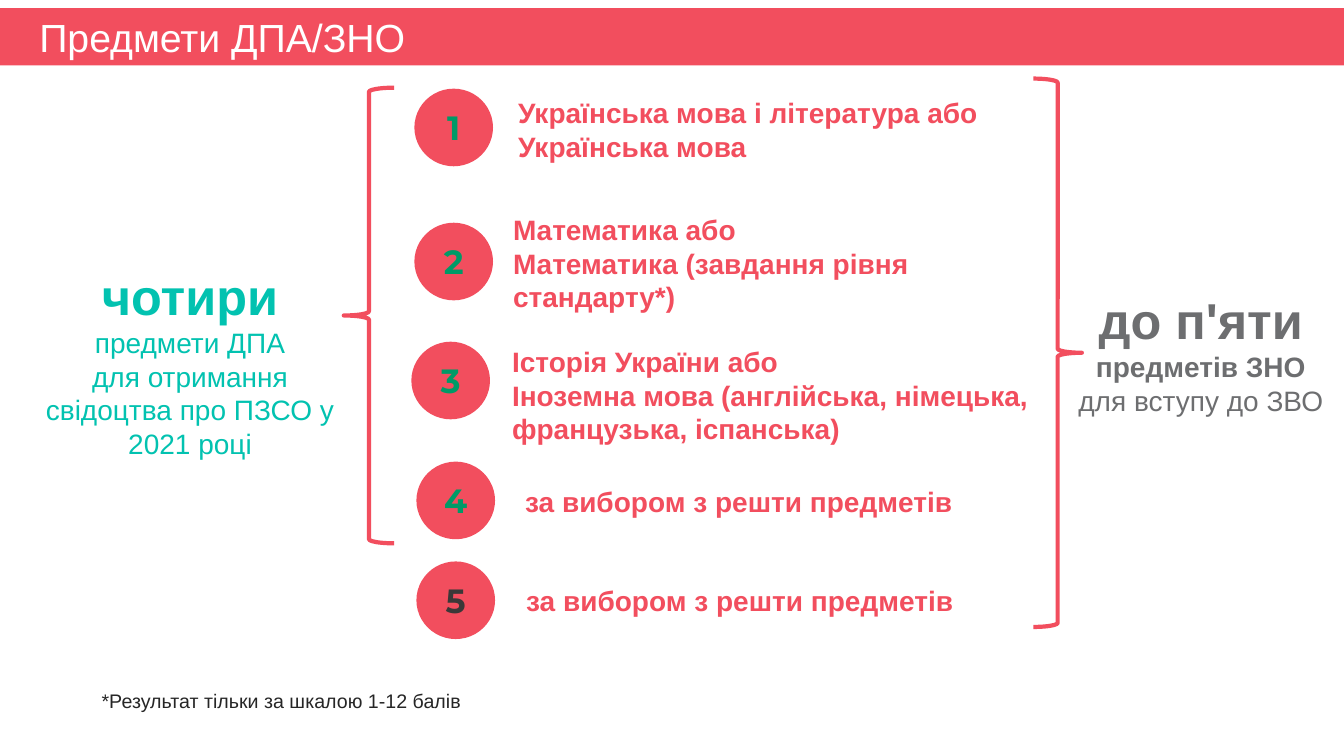
"""Build the slide that lists the DPA/ZNO exam subjects."""
from pptx import Presentation
from pptx.dml.color import RGBColor
from pptx.enum.shapes import MSO_SHAPE as SHAPE
from pptx.enum.text import MSO_ANCHOR as ANCHOR, MSO_AUTO_SIZE as AUTO, PP_ALIGN as ALIGN
from pptx.util import Inches, Pt

RED, TEAL, GREY, GREEN, DARK = "F24E5E", "02C2B0", "6D6E70", "009A67", "3B3838"


def rgb(value):
    return RGBColor.from_string(value)


class SubjectSlide:
    """Holds the style and the current slide."""

    font = "Arial"
    accent = RED

    def __init__(self, prs):
        self.slide = prs.slides.add_slide(prs.slide_layouts[5])

    def fill_text(self, tf, lines, align=ALIGN.LEFT, anchor=ANCHOR.TOP):
        frame_format = {"word_wrap": True, "auto_size": AUTO.NONE, "vertical_anchor": anchor}
        for name, value in frame_format.items():
            setattr(tf, name, value)
        for i, (text, size, color, style) in enumerate(lines):
            p = tf.paragraphs[0] if i == 0 else tf.add_paragraph()
            p.alignment = align
            r = p.add_run()
            r.text = text
            r.font.color.rgb = rgb(color)
            run_format = {"name": self.font, "size": Pt(size), "bold": False, **style}
            for name, value in run_format.items():
                setattr(r.font, name, value)

    def title(self, text, top, width, height):
        sp = self.slide.shapes.title
        box = {"left": 0, "top": top, "width": width, "height": height}
        for name, value in box.items():
            setattr(sp, name, Inches(value))
        sp.fill.solid()
        sp.fill.fore_color.rgb = rgb(self.accent)
        sp.text_frame.margin_left = Inches(0.39)
        self.fill_text(sp.text_frame, [(text, 28, "FFFFFF", {})], anchor=ANCHOR.MIDDLE)

    def text(self, box, lines, align=ALIGN.LEFT):
        sp = self.slide.shapes.add_textbox(*map(Inches, box))
        self.fill_text(sp.text_frame, lines, align)

    def shape(self, kind, box):
        sp = self.slide.shapes.add_shape(kind, *map(Inches, box))
        sp.shadow.inherit = False
        return sp

    def brace(self, kind, box):
        sp = self.shape(kind, box)
        sp.fill.background()
        sp.line.color.rgb = rgb(self.accent)
        sp.line.width = Pt(3)

    def badge(self, number, left, top, color):
        sp = self.shape(SHAPE.OVAL, (left, top, 0.78, 0.77))
        sp.fill.solid()
        sp.fill.fore_color.rgb = rgb(self.accent)
        sp.line.fill.background()
        style = {"name": "Montserrat", "bold": True}
        self.fill_text(sp.text_frame, [(str(number), 24, color, style)],
                       ALIGN.CENTER, ANCHOR.MIDDLE)


def main():
    prs = Presentation()
    prs.slide_width, prs.slide_height = Inches(13.33), Inches(7.5)
    s = SubjectSlide(prs)
    bold = {"bold": True}

    s.title("Предмети ДПА/ЗНО", 0.08, 13.33, 0.57)
    s.text((0.31, 2.58, 3.15, 2.05), [
        ("чотири", 36, TEAL, bold),
        ("предмети ДПА", 20, TEAL, {}),
        ("для отримання свідоцтва про ПЗСО у 2021 році", 20, TEAL, {}),
    ], ALIGN.CENTER)
    s.text((10.5, 2.82, 2.82, 1.62), [
        ("до п'яти", 36, GREY, bold),
        ("предметів ЗНО", 20, GREY, bold),
        ("для вступу до ЗВО", 20, GREY, {}),
    ], ALIGN.CENTER)
    s.brace(SHAPE.LEFT_BRACE, (3.41, 0.87, 0.5, 4.52))
    s.brace(SHAPE.RIGHT_BRACE, (10.25, 0.78, 0.48, 5.44))

    choice = ["за вибором з решти предметів"]
    subjects = [
        ((4.11, 0.88), GREEN, (5.04, 0.9, 5.32, 0.77),
         ["Українська мова і література або", "Українська мова"]),
        ((4.11, 2.21), GREEN, (4.99, 2.06, 4.93, 1.11),
         ["Математика або", "Математика (завдання рівня стандарту*)"]),
        ((4.08, 3.39), GREEN, (4.98, 3.37, 5.45, 1.11),
         ["Історія України або", "Іноземна мова (англійська, німецька, французька, іспанська)"]),
        ((4.13, 4.58), GREEN, (5.11, 4.76, 4.93, 0.44), choice),
        ((4.13, 5.57), DARK, (5.12, 5.74, 4.93, 0.44), choice),
    ]
    for number, (spot, color, box, lines) in enumerate(subjects, 1):
        s.badge(number, *spot, color)
        s.text(box, [(line, 20, RED, bold) for line in lines])

    s.text((0.91, 6.79, 11.94, 0.34),
           [("*Результат тільки за шкалою 1-12 балів", 14, "262626", {})], ALIGN.JUSTIFY)
    prs.save("out.pptx")


if __name__ == "__main__":
    main()
